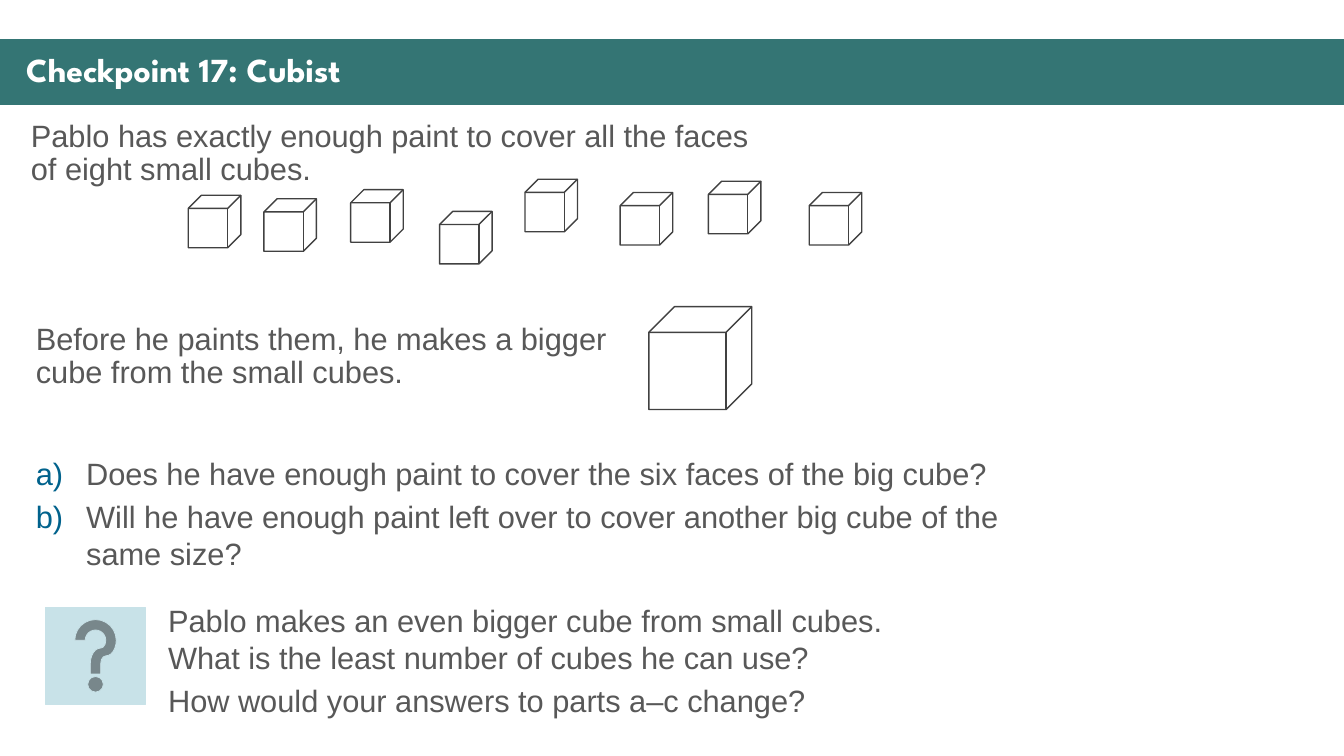
from lxml.etree import SubElement
from pptx import Presentation
from pptx.dml.color import RGBColor
from pptx.enum.shapes import MSO_SHAPE
from pptx.enum.text import MSO_ANCHOR, PP_ALIGN
from pptx.oxml.ns import qn
from pptx.util import Pt

BODY = {"name": "Arial", "size": Pt(22), "bold": False, "color": "585858"}
HEADING = {"name": "League Spartan", "size": Pt(24), "bold": True, "color": "FFFFFF"}
TIGHT = {"line_spacing": 0.9}
LIST = {"space_before": Pt(4.4)}


def add_shape(kind, box, fill=None, line=None, width=1):
    sp = s.shapes.add_shape(kind, *map(Pt, box))
    sp.shadow.inherit = False
    for part, color in ((sp.fill, fill), (sp.line.fill, line)):
        if color:
            part.solid()
            part.fore_color.rgb = RGBColor.from_string(color)
        else:
            part.background()
    if line:
        sp.line.width = Pt(width)
    return sp


def write(sp, lines, fmt, layout, anchor=MSO_ANCHOR.TOP, lettered=False):
    """Fill a text shape with one paragraph per line, lettered a), b) if asked."""
    tf = sp.text_frame
    tf.word_wrap = True
    tf.vertical_anchor = anchor
    for i, line in enumerate(lines):
        p = tf.paragraphs[0] if i == 0 else tf.add_paragraph()
        p.alignment = PP_ALIGN.LEFT
        for key, value in layout.items():
            setattr(p, key, value)
        if i == 0:
            p.space_before = Pt(0)
        if lettered:
            pPr = p._p.get_or_add_pPr()
            pPr.set("marL", str(Pt(36)))
            pPr.set("indent", str(-Pt(36)))
            color = SubElement(pPr, qn("a:buClr"))
            SubElement(color, qn("a:srgbClr"), val="00628C")
            SubElement(pPr, qn("a:buFont"), typeface="Arial")
            SubElement(pPr, qn("a:buAutoNum"), type="alphaLcParenR")
        r = p.add_run()
        r.text = line
        for key, value in fmt.items():
            if key == "color":
                r.font.color.rgb = RGBColor.from_string(value)
            else:
                setattr(r.font, key, value)


prs = Presentation()
prs.slide_width, prs.slide_height = Pt(960), Pt(540)
s = prs.slides.add_slide(prs.slide_layouts[5])

# Title on its band
band = add_shape(MSO_SHAPE.RECTANGLE, (0, 28, 960, 47), "347574")
s.shapes._spTree.insert(2, band._element)
title = s.shapes.title
title.left, title.top, title.width, title.height = map(Pt, (11.5, 34.5, 939, 34))
write(title, ["Checkpoint 17: Cubist"], HEADING, TIGHT, MSO_ANCHOR.MIDDLE)

# Eight small cubes and the big one
small_cubes = [(134.5, 139.5), (188.5, 142), (250.5, 135.5), (314, 151),
               (375, 128), (443, 137.5), (506, 129.5), (578, 137.5)]
cubes = [(x, y, 37.5) for x, y in small_cubes] + [(463.5, 219, 73.5)]
for x, y, size in cubes:
    add_shape(MSO_SHAPE.CUBE, (x, y, size, size), line="414141")

# Question mark beside the extension task
add_shape(MSO_SHAPE.ACTION_BUTTON_HELP, (32.5, 434, 71.5, 69), "C8E2E8", "C8E2E8", 0.5)

texts = [
    ((15, 83, 533, 67), TIGHT, False,
     ["Pablo has exactly enough paint to cover all the faces of eight small cubes."]),
    ((18.5, 228, 433, 67), TIGHT, False,
     ["Before he paints them, he makes a bigger cube from the small cubes."]),
    ((18.5, 321, 745, 93), LIST, True,
     ["Does he have enough paint to cover the six faces of the big cube?",
      "Will he have enough paint left over to cover another big cube of the same size?"]),
    ((113, 426, 575, 93), LIST, False,
     ["Pablo makes an even bigger cube from small cubes. "
      "What is the least number of cubes he can use?",
      "How would your answers to parts a–c change?"]),
]
for box, layout, lettered, lines in texts:
    write(s.shapes.add_textbox(*map(Pt, box)), lines, BODY, layout, lettered=lettered)

prs.save("out.pptx")
